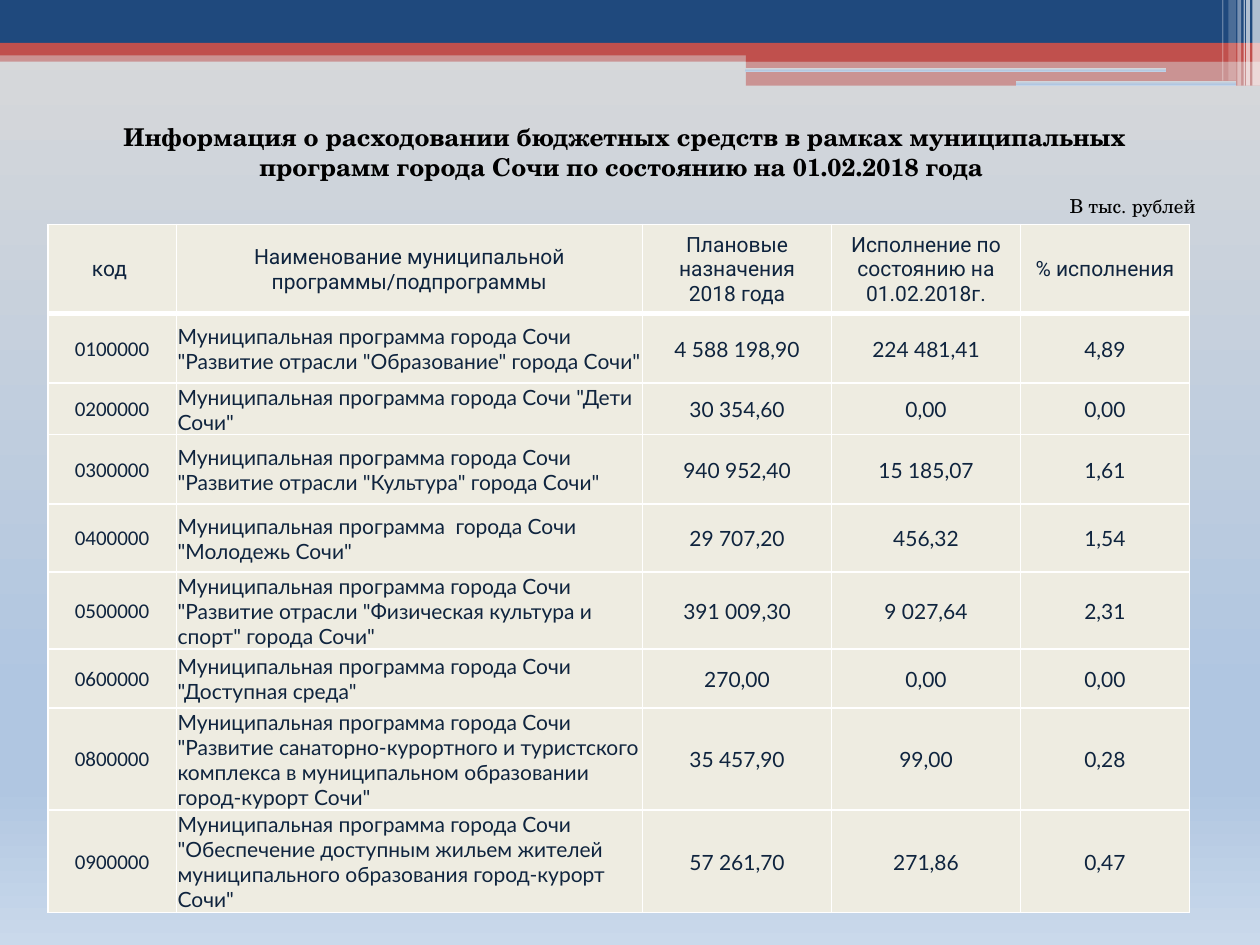
from lxml import etree
from pptx import Presentation, util as u
from pptx.dml.color import RGBColor
from pptx.enum import shapes, text
from pptx.oxml import ns

CENTER, LEFT = text.PP_ALIGN.CENTER, text.PP_ALIGN.LEFT
RECT, ROUND = shapes.MSO_SHAPE.RECTANGLE, shapes.MSO_SHAPE.ROUNDED_RECTANGLE
NAVY, RED, WHITE = "1F497D", "C0504D", "FFFFFF"
SKY = [(0, "D9D9D9"), (74, "B0C6E1"), (83, "B0C6E1"), (100, "CAD9EB")]

BANDS = [
    (0, 0.4, 10, 0.09, RED, 50),
    (0, 0, 10, 0.34, NAVY, 100),
    (0, 0.34, 10, 0.1, RED, 100),
    (5.92, 0.39, 4.08, 0.1, RED, 100),
    (5.92, 0.48, 4.08, 0.2, RED, 50),
]
SLOTS = [(5.91, 0.54, 3.35, 0.03), (8.06, 0.64, 1.75, 0.04)]
STRIPES = [
    (9.94, 0.06, 0.68, 65),
    (9.89, 0.03, 0.68, 65),
    (9.87, 0.01, 0.68, 60),
    (9.82, 0.03, 0.68, 40),
    (9.75, 0.06, 0.64, 20),
    (9.7, 0.01, 0.64, 30),
]

COLUMNS = [1.02, 3.7, 1.5, 1.5, 1.34]
HEIGHTS = [0.71, 0.55, 0.41, 0.55, 0.54, 0.56, 0.47, 0.65, 0.79]
HEADER = (
    "код ",
    "Наименование муниципальной программы/подпрограммы",
    "Плановые назначения\v2018 года",
    "Исполнение по состоянию на 01.02.2018г.",
    "% исполнения",
)
PROGRAMS = [
    ("0100000", 'Муниципальная программа города Сочи "Развитие отрасли "Образование" города Сочи"',
     "4 588 198,90", "224 481,41", "4,89"),
    ("0200000", 'Муниципальная программа города Сочи "Дети Сочи"',
     "30 354,60", "0,00", "0,00"),
    ("0300000", 'Муниципальная программа города Сочи "Развитие отрасли "Культура" города Сочи"',
     "940 952,40", "15 185,07", "1,61"),
    ("0400000", 'Муниципальная программа  города Сочи "Молодежь Сочи"',
     "29 707,20", "456,32", "1,54"),
    ("0500000", 'Муниципальная программа города Сочи "Развитие отрасли "Физическая культура и спорт" города Сочи"',
     "391 009,30", "9 027,64", "2,31"),
    ("0600000", 'Муниципальная программа города Сочи "Доступная среда"',
     "270,00", "0,00", "0,00"),
    ("0800000", 'Муниципальная программа города Сочи "Развитие санаторно-курортного и туристского '
     'комплекса в муниципальном образовании город-курорт Сочи"',
     "35 457,90", "99,00", "0,28"),
    ("0900000", 'Муниципальная программа города Сочи "Обеспечение доступным жильем жителей '
     'муниципального образования город-курорт Сочи"',
     "57 261,70", "271,86", "0,47"),
]


def color(value):
    return RGBColor.from_string(value)


def apply(target, values):
    for name, value in values.items():
        setattr(target, name, value)


class Page:
    """Holds the style and the current slide, and draws each kind of element."""

    cell_format = {
        "margin_left": u.Inches(0.01),
        "margin_right": u.Inches(0.01),
        "margin_top": u.Inches(0.01),
        "margin_bottom": 0,
        "vertical_anchor": text.MSO_ANCHOR.MIDDLE,
    }
    cell_fill, cell_ink, heading_font = "EEECE1", "0F243E", "TeX Gyre Schola"

    def __init__(self, presentation):
        self.slide = presentation.slides.add_slide(presentation.slide_layouts[6])

    def gradient(self, fill, element):
        fill.gradient()
        fill.gradient_angle = 270
        stops = element.find(".//" + ns.qn("a:gsLst"))
        stops.clear()
        for position, value in SKY:
            stop = etree.SubElement(stops, ns.qn("a:gs"), pos=str(position * 1000))
            etree.SubElement(stop, ns.qn("a:srgbClr"), val=value)

    def background(self):
        self.gradient(self.slide.background.fill, self.slide.element)

    def box(self, left, top, width, height, fill=None, opacity=100):
        lengths = map(u.Inches, (left, top, width, height))
        shape = self.slide.shapes.add_shape(RECT if fill else ROUND, *lengths)
        shape.shadow.inherit = False
        shape.line.fill.background()
        if not fill:
            self.gradient(shape.fill, shape.element)
            return
        shape.fill.solid()
        shape.fill.fore_color.rgb = color(fill)
        if opacity < 100:
            tint = shape.element.spPr.find(".//" + ns.qn("a:srgbClr"))
            etree.SubElement(tint, ns.qn("a:alpha"), val=str(opacity * 1000))

    def set_text(self, paragraph, words, alignment, ink, **font):
        apply(paragraph, {"alignment": alignment, "text": words})
        for run in paragraph.runs:
            apply(run.font, font)
            run.font.color.rgb = color(ink)

    def label(self, left, top, width, height, words, alignment, size, bold=False):
        lengths = map(u.Inches, (left, top, width, height))
        frame = self.slide.shapes.add_textbox(*lengths).text_frame
        apply(frame, {"word_wrap": True, "auto_size": text.MSO_AUTO_SIZE.SHAPE_TO_FIT_TEXT})
        self.set_text(frame.paragraphs[0], words, alignment, "000000",
                      name=self.heading_font, size=u.Pt(size), bold=bold)

    def border(self, cell, side, width):
        properties = cell._tc.get_or_add_tcPr()
        line = etree.SubElement(properties, ns.qn("a:ln" + side), w=str(int(u.Pt(width))))
        solid = etree.SubElement(line, ns.qn("a:solidFill"))
        etree.SubElement(solid, ns.qn("a:srgbClr"), val=WHITE)

    def cell(self, cell, words, row, column):
        apply(cell, self.cell_format)
        thick = {(0, "B"), (1, "T")}
        for side in "LRTB":
            self.border(cell, side, 3 if (row, side) in thick else 1)
        cell.fill.solid()
        cell.fill.fore_color.rgb = color(self.cell_fill)
        font = "Roboto" if row == 0 else "Calibri" if column == 0 else "Lato"
        alignment = LEFT if row and column == 1 else CENTER
        self.set_text(cell.text_frame.paragraphs[0], words, alignment, self.cell_ink,
                      name=font, size=u.Pt(12), bold=False)

    def table(self, left, top, columns, heights, rows):
        lengths = map(u.Inches, (left, top, sum(columns), sum(heights)))
        table = self.slide.shapes.add_table(len(rows), len(columns), *lengths).table
        apply(table, {"first_row": False, "horz_banding": False})
        for column, width in zip(table.columns, columns):
            column.width = u.Inches(width)
        for row, height in zip(table.rows, heights):
            row.height = u.Inches(height)
        for r, row in enumerate(rows):
            for c, words in enumerate(row):
                self.cell(table.cell(r, c), words, r, c)


def main():
    presentation = Presentation()
    apply(presentation, {"slide_width": u.Inches(10), "slide_height": u.Inches(7.5)})
    page = Page(presentation)
    page.background()
    for band in BANDS:
        page.box(*band)
    for slot in SLOTS:
        page.box(*slot)
    for left, width, height, opacity in STRIPES:
        page.box(left, 0, width, height, WHITE, opacity)
    page.table(0.38, 1.78, COLUMNS, HEIGHTS, [HEADER, *PROGRAMS])
    page.label(0.51, 0.92, 8.9, 0.57, "Информация о расходовании бюджетных средств в рамках "
               "муниципальных программ города Сочи по состоянию на 01.02.2018 года ",
               CENTER, 14, True)
    page.label(8.39, 1.49, 1.57, 0.29, "В тыс. рублей", LEFT, 11)
    presentation.save("out.pptx")


if __name__ == "__main__":
    main()
